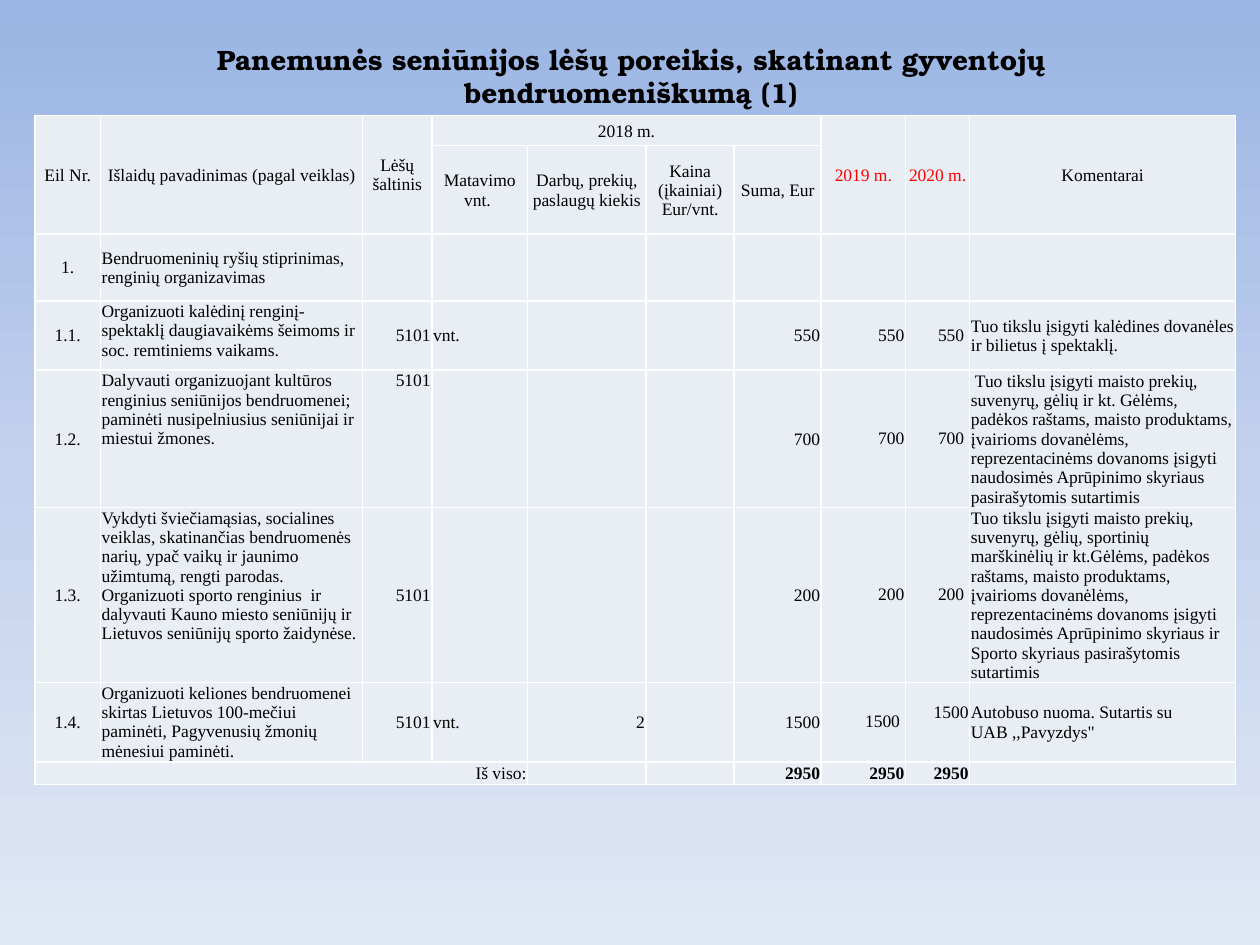
from copy import deepcopy

from lxml import etree
from pptx import Presentation
from pptx.dml.color import RGBColor
from pptx.enum.text import MSO_ANCHOR, PP_ALIGN
from pptx.oxml.ns import qn
from pptx.util import Pt

LEFT, CENTER, RIGHT = PP_ALIGN.LEFT, PP_ALIGN.CENTER, PP_ALIGN.RIGHT
TOP, MIDDLE = MSO_ANCHOR.TOP, MSO_ANCHOR.MIDDLE

BLACK = RGBColor(0x00, 0x00, 0x00)
RED = RGBColor(0xFF, 0x00, 0x00)
WHITE = RGBColor(0xFF, 0xFF, 0xFF)
CELL_FILL = RGBColor(0xE9, 0xED, 0xF4)
SKY = [
    (0, RGBColor(0x9A, 0xB5, 0xE4)),
    (0.5, RGBColor(0xC2, 0xD1, 0xED)),
    (1, RGBColor(0xE1, 0xE8, 0xF5)),
]

TITLE = "Panemunės seniūnijos lėšų poreikis, skatinant gyventojų bendruomeniškumą (1)"
COL_WIDTHS = [37.4, 149.8, 39.6, 54.7, 67.7, 50.4, 49.7, 48.2, 36.7, 151.9]
ROW_HEIGHTS = [17.3, 50.4, 38.2, 39.6, 78.5, 94.3, 45.4, 13]
COL_ALIGNS = [CENTER, LEFT, RIGHT, LEFT, RIGHT, RIGHT, RIGHT, RIGHT, RIGHT, LEFT]
HEADER_ROWS = 2
TOTAL_ROW = 7
MERGES = [((0, c), (1, c)) for c in (0, 1, 2, 7, 8, 9)]
MERGES += [((0, 3), (0, 6)), ((TOTAL_ROW, 0), (TOTAL_ROW, 3))]
TOP_CELLS = {(r, 1) for r in range(3, 7)} | {(4, 2), (5, 9)}
RAISED_CELL = (6, 8)

ROWS = [
    ["Eil Nr.", "Išlaidų pavadinimas (pagal veiklas)", "Lėšų šaltinis", "2018 m.",
     "", "", "", "2019 m.", "2020 m.", "Komentarai"],
    ["", "", "", "Matavimo vnt. ", "Darbų, prekių, paslaugų kiekis",
     "Kaina (įkainiai) Eur/vnt.", "Suma, Eur", "", "", ""],
    ["1.", "Bendruomeninių ryšių stiprinimas, renginių organizavimas",
     "", "", "", "", "", "", "", ""],
    ["1.1.", "Organizuoti kalėdinį renginį-spektaklį daugiavaikėms šeimoms ir "
     "soc. remtiniems vaikams.",
     "5101", "vnt.", "", "", "550", " 550", "550 ",
     "Tuo tikslu įsigyti kalėdines dovanėles ir bilietus į spektaklį."],
    ["1.2.", "Dalyvauti organizuojant kultūros renginius seniūnijos bendruomenei; "
     "paminėti nusipelniusius seniūnijai ir miestui žmones.",
     "5101", "", "", "", "700", " 700", "700 ",
     " Tuo tikslu įsigyti maisto prekių, suvenyrų, gėlių ir kt. Gėlėms, padėkos "
     "raštams, maisto produktams, įvairioms dovanėlėms, reprezentacinėms dovanoms "
     "įsigyti naudosimės Aprūpinimo skyriaus pasirašytomis sutartimis"],
    ["1.3.", "Vykdyti šviečiamąsias, socialines veiklas, skatinančias bendruomenės "
     "narių, ypač vaikų ir jaunimo užimtumą, rengti parodas. Organizuoti sporto "
     "renginius  ir dalyvauti Kauno miesto seniūnijų ir Lietuvos seniūnijų sporto "
     "žaidynėse.",
     "5101", "", "", "", "200", " 200", "200 ",
     "Tuo tikslu įsigyti maisto prekių, suvenyrų, gėlių, sportinių marškinėlių ir "
     "kt.Gėlėms, padėkos raštams, maisto produktams, įvairioms dovanėlėms, "
     "reprezentacinėms dovanoms įsigyti naudosimės Aprūpinimo skyriaus ir Sporto "
     "skyriaus pasirašytomis sutartimis"],
    ["1.4.", "Organizuoti keliones bendruomenei skirtas Lietuvos 100-mečiui "
     "paminėti, Pagyvenusių žmonių mėnesiui paminėti.",
     "5101", "vnt.", "2", "", "1500", "1500 ", " 1500",
     'Autobuso nuoma. Sutartis su UAB ,,Pavyzdys"'],
    ["Iš viso:", "", "", "", "", "", "2950", "2950", "2950", ""],
]


class Deck:
    """Hold the style and the current slide, and add each kind of element."""

    title_font = {"name": "TeX Gyre Bonum", "size": Pt(16), "bold": True}
    cell_font = {"name": "Times New Roman", "size": Pt(10), "bold": False}

    def __init__(self, prs):
        self.s = prs.slides.add_slide(prs.slide_layouts[5])

    def set_attrs(self, obj, values):
        for name, value in values.items():
            setattr(obj, name, value)

    def background(self, stops):
        fill = self.s.background.fill
        fill.gradient()
        fill.gradient_angle = 270
        gs_list = next(self.s.element.iter(qn("a:gsLst")))
        gs_list.append(deepcopy(gs_list[0]))
        for stop, (position, color) in zip(fill.gradient_stops, stops):
            stop.position = position
            stop.color.rgb = color

    def text(self, tf, text, align, font, color=BLACK):
        p = tf.paragraphs[0]
        p.alignment = align
        if text:
            r = p.add_run()
            r.text = text
            self.set_attrs(r.font, font)
            r.font.color.rgb = color
        else:
            size = str(int(font["size"].pt * 100))
            etree.SubElement(p._p, qn("a:endParaRPr"), sz=size)

    def title(self, text, left, top, width, height):
        sp = self.s.shapes.title
        self.set_attrs(sp, {"left": Pt(left), "top": Pt(top),
                            "width": Pt(width), "height": Pt(height)})
        self.set_attrs(sp.text_frame, {"word_wrap": True, "vertical_anchor": MIDDLE})
        self.text(sp.text_frame, text, CENTER, self.title_font)

    def borders(self, cell, color, width):
        tc_pr = cell._tc.get_or_add_tcPr()
        for side in "LRTB":
            ln = etree.SubElement(tc_pr, qn(f"a:ln{side}"), w=str(Pt(width)))
            fill = etree.SubElement(ln, qn("a:solidFill"))
            etree.SubElement(fill, qn("a:srgbClr"), val=str(color))

    def cell(self, cell, text, align, anchor, bottom=0, bold=False, color=BLACK):
        self.borders(cell, WHITE, 1)
        cell.fill.solid()
        cell.fill.fore_color.rgb = CELL_FILL
        inset = Pt(0.72)
        self.set_attrs(cell, {"margin_left": inset, "margin_right": inset,
                              "margin_top": inset, "margin_bottom": Pt(bottom),
                              "vertical_anchor": anchor})
        self.text(cell.text_frame, text, align, {**self.cell_font, "bold": bold}, color)

    def table(self, rows, left, top):
        frame = self.s.shapes.add_table(len(rows), len(COL_WIDTHS), Pt(left), Pt(top),
                                        Pt(sum(COL_WIDTHS)), Pt(sum(ROW_HEIGHTS)))
        table = frame.table
        for col, width in zip(table.columns, COL_WIDTHS):
            col.width = Pt(width)
        for row, height in zip(table.rows, ROW_HEIGHTS):
            row.height = Pt(height)
        for i, row in enumerate(rows):
            header = i < HEADER_ROWS
            for j, text in enumerate(row):
                year = j in (7, 8)
                align = CENTER if header else COL_ALIGNS[j]
                if (i, j) == (TOTAL_ROW, 0):
                    align = RIGHT
                bottom = 0.72 if year and 3 <= i < TOTAL_ROW else 0
                self.cell(table.cell(i, j), text, align,
                          TOP if (i, j) in TOP_CELLS else MIDDLE,
                          bottom=12 if (i, j) == RAISED_CELL else bottom,
                          bold=i == TOTAL_ROW and j >= 6,
                          color=RED if header and year else BLACK)
        for first, last in MERGES:
            table.cell(*first).merge(table.cell(*last))


def main():
    prs = Presentation()
    prs.slide_width, prs.slide_height = Pt(720), Pt(540)
    deck = Deck(prs)
    deck.background(SKY)
    deck.title(TITLE, 36.7, 9.4, 648, 67.7)
    deck.table(ROWS, 20, 66)
    prs.save("out.pptx")


if __name__ == "__main__":
    main()
